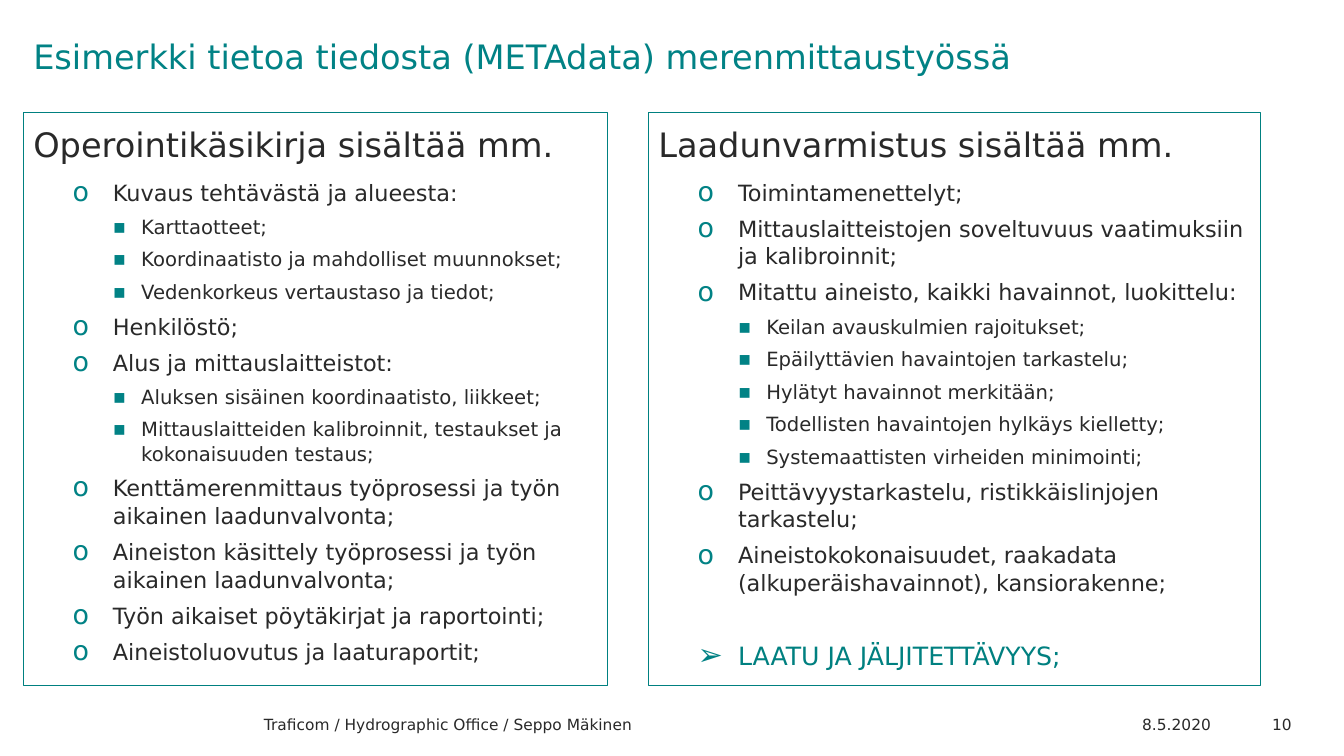
"""Builds the slide on metadata in hydrographic surveying."""
import pptx
import pptx.util
import pptx.dml.color
import pptx.enum.text
from lxml import etree

Inches, Pt = pptx.util.Inches, pptx.util.Pt
RGBColor = pptx.dml.color.RGBColor
PP_ALIGN = pptx.enum.text.PP_ALIGN
MSO_ANCHOR = pptx.enum.text.MSO_ANCHOR

FONT = "DejaVu Sans"
TEAL = RGBColor(0x01, 0x82, 0x85)
FRAME = RGBColor(0x00, 0x80, 0x80)
INK = RGBColor(0x29, 0x29, 0x29)

TITLE = "Esimerkki tietoa tiedosta (METAdata) merenmittaustyössä"
MANUAL = [
    ("head", "Operointikäsikirja sisältää mm."),
    ("item", "Kuvaus tehtävästä ja alueesta:"),
    ("sub", "Karttaotteet;"),
    ("sub", "Koordinaatisto ja mahdolliset muunnokset;"),
    ("sub", "Vedenkorkeus vertaustaso ja tiedot;"),
    ("item", "Henkilöstö;"),
    ("item", "Alus ja mittauslaitteistot:"),
    ("sub", "Aluksen sisäinen koordinaatisto, liikkeet;"),
    ("sub", "Mittauslaitteiden kalibroinnit, testaukset ja kokonaisuuden testaus;"),
    ("item", "Kenttämerenmittaus työprosessi ja työn aikainen laadunvalvonta;"),
    ("item", "Aineiston käsittely työprosessi ja työn aikainen laadunvalvonta;"),
    ("item", "Työn aikaiset pöytäkirjat ja raportointi;"),
    ("item", "Aineistoluovutus ja laaturaportit;"),
]
QUALITY = [
    ("head", "Laadunvarmistus sisältää mm."),
    ("item", "Toimintamenettelyt;"),
    ("item", "Mittauslaitteistojen soveltuvuus vaatimuksiin ja kalibroinnit;"),
    ("item", "Mitattu aineisto, kaikki havainnot, luokittelu:"),
    ("sub", "Keilan avauskulmien rajoitukset;"),
    ("sub", "Epäilyttävien havaintojen tarkastelu;"),
    ("sub", "Hylätyt havainnot merkitään;"),
    ("sub", "Todellisten havaintojen hylkäys kielletty;"),
    ("sub", "Systemaattisten virheiden minimointi;"),
    ("item", "Peittävyystarkastelu, ristikkäislinjojen tarkastelu;"),
    ("item", "Aineistokokonaisuudet, raakadata (alkuperäishavainnot), kansiorakenne;"),
    ("goal", "LAATU JA JÄLJITETTÄVYYS;"),
]
PANELS = [(1, 0.23, 5.8, MANUAL), (2, 6.43, 6.07, QUALITY)]
FOOTERS = [
    (2.52, 4.5, PP_ALIGN.LEFT, "Traficom / Hydrographic Office / Seppo Mäkinen"),
    (9.11, 3, PP_ALIGN.RIGHT, "8.5.2020"),
    (12.36, 0.55, PP_ALIGN.RIGHT, "10"),
]
# level, margin, indent, bullet, bullet %, size, colour, spacing, before, after
STYLES = {
    "head": (0, 0, 0, None, 100, 24, INK, 1.14, 0, 10),
    "item": (1, 0.79, -0.4, "o", 120, 16, INK, 1.03, 0, 6),
    "sub": (2, 1.07, -0.28, "▪", 100, 14, INK, 1.03, 0, 6),
    "goal": (1, 0.79, -0.4, "➢", 120, 18, FRAME, 1.03, 25, 6),
}


def place(sp, left, top, width, height):
    sp.left, sp.top = Inches(left), Inches(top)
    sp.width, sp.height = Inches(width), Inches(height)


def add_run(p, text, size, color):
    r = p.add_run()
    r.text = text
    r.font.name = FONT
    r.font.size = Pt(size)
    r.font.color.rgb = color


def add_element(parent, tag, **attrs):
    ns = "http://schemas.openxmlformats.org/drawingml/2006/main"
    return etree.SubElement(parent, f"{{{ns}}}{tag}", **attrs)


def set_bullet(p, margin, indent, char, percent):
    ppr = p._p.get_or_add_pPr()
    ppr.set("marL", str(Inches(margin)))
    ppr.set("indent", str(Inches(indent)))
    if char is None:
        add_element(ppr, "buNone")
        return
    add_element(add_element(ppr, "buClr"), "srgbClr", val=str(TEAL))
    add_element(ppr, "buSzPct", val=str(percent * 1000))
    add_element(ppr, "buFont", typeface=FONT)
    add_element(ppr, "buChar", char=char)


def prepare(tf, anchor):
    tf.word_wrap = True
    tf.auto_size = pptx.enum.text.MSO_AUTO_SIZE.NONE
    tf.vertical_anchor = anchor
    return tf


def fill_panel(tf, lines):
    for i, (style, text) in enumerate(lines):
        level, margin, indent, char, percent, size, color, spacing, before, after = STYLES[style]
        p = tf.add_paragraph() if i else tf.paragraphs[0]
        p.level = level
        set_bullet(p, margin, indent, char, percent)
        p.line_spacing = spacing
        p.space_before, p.space_after = Pt(before), Pt(after)
        add_run(p, text, size, color)


def main():
    prs = pptx.Presentation()
    prs.slide_width, prs.slide_height = Inches(13.33), Inches(7.5)
    s = prs.slides.add_slide(prs.slide_layouts[3])

    title = s.shapes.title
    place(title, 0.23, 0.35, 12.4, 0.61)
    p = prepare(title.text_frame, MSO_ANCHOR.TOP).paragraphs[0]
    p.alignment = PP_ALIGN.LEFT
    p.line_spacing = 0.9
    add_run(p, TITLE, 24, TEAL)

    for idx, left, width, lines in PANELS:
        sp = s.placeholders[idx]
        place(sp, left, 1.12, width, 5.68)
        sp.line.color.rgb = FRAME
        sp.line.width = Pt(0.75)
        fill_panel(prepare(sp.text_frame, MSO_ANCHOR.TOP), lines)

    for left, width, align, text in FOOTERS:
        sp = s.shapes.add_textbox(Inches(left), Inches(6.99), Inches(width), Inches(0.39))
        p = prepare(sp.text_frame, MSO_ANCHOR.MIDDLE).paragraphs[0]
        p.alignment = align
        add_run(p, text, 11, INK)

    prs.save("out.pptx")


if __name__ == "__main__":
    main()
